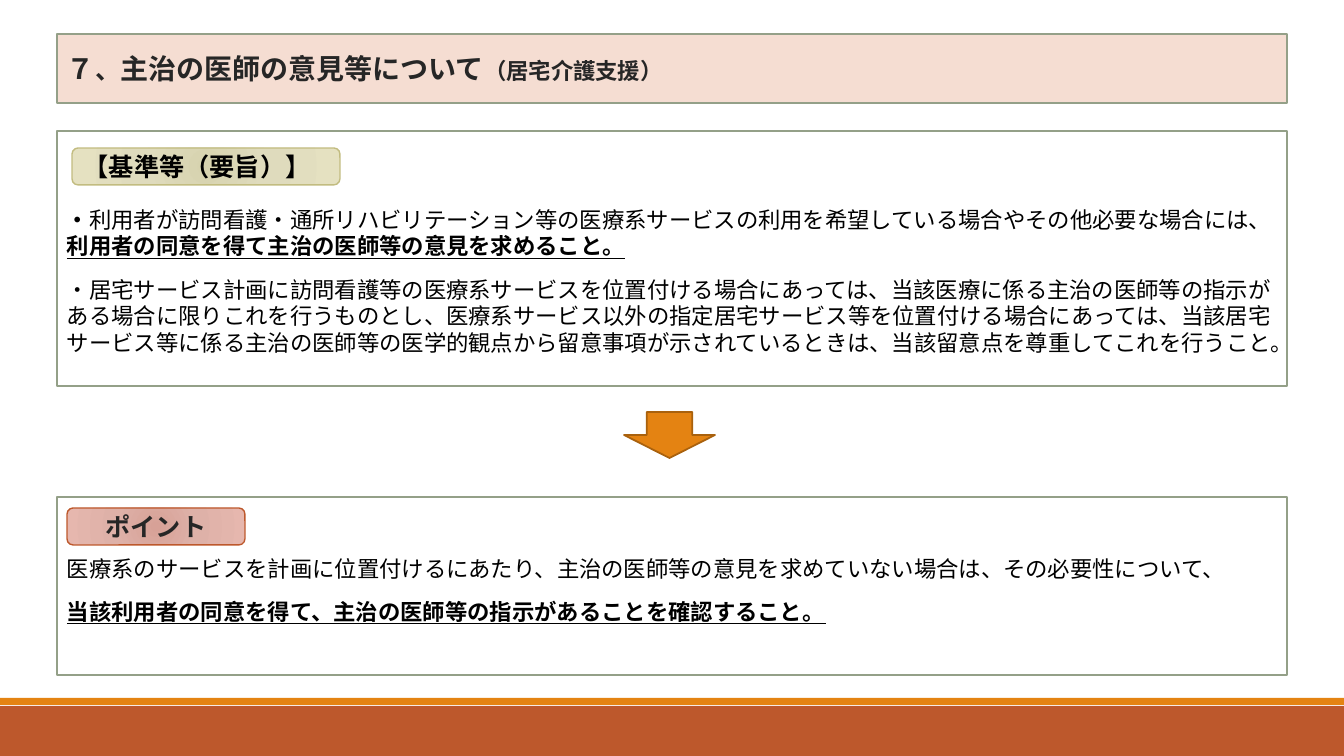
from dataclasses import dataclass
from typing import Optional

from lxml.etree import SubElement
from pptx import Presentation
from pptx.dml.color import RGBColor
from pptx.enum.shapes import MSO_SHAPE
from pptx.enum.text import MSO_ANCHOR, MSO_AUTO_SIZE, PP_ALIGN
from pptx.oxml import parse_xml
from pptx.oxml.ns import nsdecls, qn
from pptx.util import Emu, Pt

FONT = "Noto Sans CJK JP"
BLACK, DARK, SAGE = "000000", "262626", "94A088"
RUST, ORANGE, WHITE = "BD582C", "E48312", "FFFFFF"


@dataclass(frozen=True)
class Area:
    left: int
    top: int
    width: int
    height: int


@dataclass(frozen=True)
class Piece:
    text: str
    bold: bool = False
    underline: bool = False
    size: Optional[int] = None


@dataclass(frozen=True)
class Panel:
    area: Area
    text_top: int
    paragraphs: tuple[tuple[Piece, ...], ...]


@dataclass(frozen=True)
class Badge:
    area: Area
    text: str
    color: str
    align: PP_ALIGN
    stops: tuple[str, str, str]
    border: str


@dataclass(frozen=True)
class Block:
    kind: MSO_SHAPE
    area: Area
    fill: str
    border: Optional[str] = None


TITLE_AREA = Area(57, 34, 1230, 69)
TITLE = (
    Piece("７", True, size=20),
    Piece("、", True, size=18),
    Piece("主治の医師の意見等について", True, size=20),
    Piece("（居宅介護支援）", True, size=16),
)
PANELS = (
    Panel(Area(57, 131, 1230, 255), 75, (
        (
            Piece("・", True),
            Piece("利用者が訪問看護・通所リハビリテーション等の医療系サービスの利用を希望している場合やその他必要な場合には、"),
            Piece("利用者の同意を得て主治の医師等の意見を求めること。", True, True),
        ),
        (
            Piece(
                "・居宅サービス計画に訪問看護等の医療系サービスを位置付ける場合にあっては、"
                "当該医療に係る主治の医師等の指示がある場合に限りこれを行うものとし、"
                "医療系サービス以外の指定居宅サービス等を位置付ける場合にあっては、"
                "当該居宅サービス等に係る主治の医師等の医学的観点から留意事項が示されているときは、"
                "当該留意点を尊重してこれを行うこと。"
            ),
        ),
    )),
    Panel(Area(57, 497, 1230, 178), 58, (
        (Piece("医療系のサービスを計画に位置付けるにあたり、主治の医師等の意見を求めていない場合は、その必要性について、"),),
        (Piece("当該利用者の同意を得て、主治の医師等の指示があることを確認すること。", True, True),),
    )),
)
BADGES = (
    Badge(Area(67, 508, 178, 37), "ポイント", DARK, PP_ALIGN.CENTER,
          ("D7A197", "DEB1A8", "E6B7AE"), RUST),
    Badge(Area(72, 148, 268, 37), "【基準等（要旨）】", BLACK, PP_ALIGN.LEFT,
          ("D7D3AF", "DFDBBD", "E5E1C1"), "C2BC80"),
)
BLOCKS = (
    Block(MSO_SHAPE.RECTANGLE, Area(0, 706, 1344, 50), RUST),
    Block(MSO_SHAPE.RECTANGLE, Area(0, 698, 1344, 7), ORANGE),
    Block(MSO_SHAPE.DOWN_ARROW, Area(624, 412, 91, 46), ORANGE, "A9610D"),
)


def px(count: int) -> Emu:
    return Emu(round(count * 914400 / 100.8))


def paint(target, color: str) -> None:
    target.solid()
    target.fore_color.rgb = RGBColor.from_string(color)


def outline(shape, color: str, points: float) -> None:
    paint(shape.line.fill, color)
    shape.line.width = Pt(points)


def place(shape, area: Area) -> None:
    shape.left, shape.top = px(area.left), px(area.top)
    shape.width, shape.height = px(area.width), px(area.height)


def write(paragraph, pieces: tuple[Piece, ...], size: int, color: str,
          align: PP_ALIGN = PP_ALIGN.LEFT) -> None:
    paragraph.alignment = align
    paragraph.space_before = Pt(0)
    font = paragraph.font
    font.size, font.name = Pt(size), FONT
    paint(font.fill, color)
    properties = paragraph._p.get_or_add_pPr()
    properties.set("marL", "0")
    properties.set("indent", "0")
    defaults = properties.find(qn("a:defRPr"))
    SubElement(defaults, qn("a:ea"), typeface=FONT)
    defaults.addprevious(parse_xml(f"<a:buNone {nsdecls('a')}/>"))
    for piece in pieces:
        run = paragraph.add_run()
        run.text = piece.text
        run.font.bold = piece.bold
        run.font.underline = piece.underline
        if piece.size:
            run.font.size = Pt(piece.size)


def prepare(frame, anchor: MSO_ANCHOR, top: int = 5) -> None:
    frame.word_wrap = True
    frame.auto_size = MSO_AUTO_SIZE.NONE
    frame.vertical_anchor = anchor
    frame.margin_left = frame.margin_right = px(10)
    frame.margin_top, frame.margin_bottom = px(top), px(5)


def draw_title(shape) -> None:
    place(shape, TITLE_AREA)
    paint(shape.fill, "F5DDD2")
    outline(shape, SAGE, 1)
    prepare(shape.text_frame, MSO_ANCHOR.MIDDLE)
    write(shape.text_frame.paragraphs[0], TITLE, 20, DARK)


def draw_panel(shape, panel: Panel) -> None:
    place(shape, panel.area)
    paint(shape.fill, WHITE)
    outline(shape, SAGE, 1.25)
    frame = shape.text_frame
    prepare(frame, MSO_ANCHOR.TOP, panel.text_top)
    for index, pieces in enumerate(panel.paragraphs):
        paragraph = frame.add_paragraph() if index else frame.paragraphs[0]
        write(paragraph, pieces, 16, BLACK)
        paragraph.line_spacing = Pt(19)
        paragraph.space_after = Pt(12)


def add_block(slide, block: Block) -> None:
    area = block.area
    shape = slide.shapes.add_shape(
        block.kind, px(area.left), px(area.top), px(area.width), px(area.height))
    shape.shadow.inherit = False
    paint(shape.fill, block.fill)
    if block.border:
        outline(shape, block.border, 1.25)
    else:
        shape.line.fill.background()


def add_badge(slide, badge: Badge) -> None:
    area = badge.area
    shape = slide.shapes.add_shape(
        MSO_SHAPE.ROUNDED_RECTANGLE,
        px(area.left), px(area.top), px(area.width), px(area.height))
    shape.shadow.inherit = False
    outline(shape, badge.border, 1)
    stops = "".join(
        f'<a:gs pos="{position}"><a:srgbClr val="{color}"/></a:gs>'
        for position, color in zip((0, 45000, 100000), badge.stops))
    shape._element.spPr.find(qn("a:prstGeom")).addnext(parse_xml(
        f"<a:gradFill {nsdecls('a')}><a:gsLst>{stops}</a:gsLst>"
        '<a:path path="circle"><a:fillToRect l="100000" t="100000" r="100000" b="100000"/>'
        "</a:path></a:gradFill>"))
    prepare(shape.text_frame, MSO_ANCHOR.MIDDLE)
    write(shape.text_frame.paragraphs[0], (Piece(badge.text, True),),
          18, badge.color, badge.align)


def main() -> None:
    deck = Presentation()
    deck.slide_width, deck.slide_height = px(1344), px(756)
    slide = deck.slides.add_slide(deck.slide_layouts[3])
    title, *bodies = slide.placeholders
    draw_title(title)
    for body, panel in zip(bodies, PANELS):
        draw_panel(body, panel)
    for block in BLOCKS:
        add_block(slide, block)
    for badge in BADGES:
        add_badge(slide, badge)
    deck.save("out.pptx")


if __name__ == "__main__":
    main()
